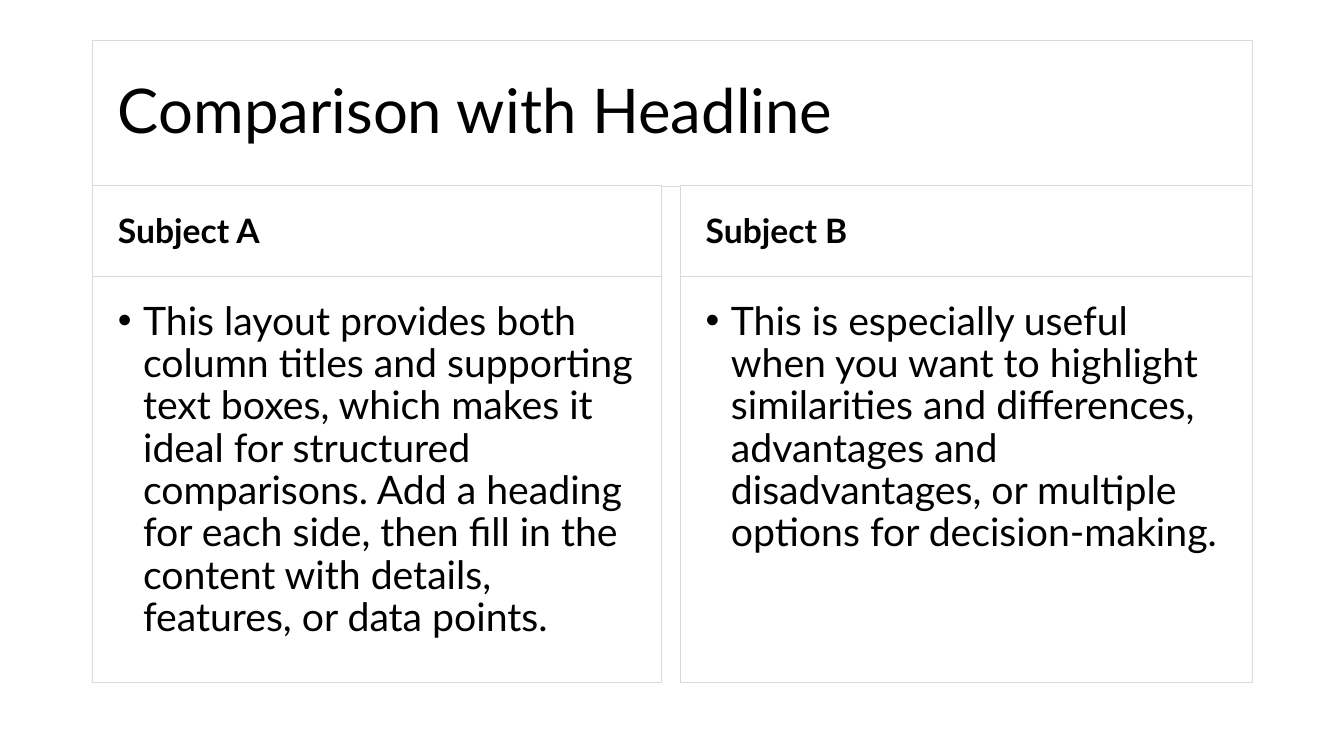
from pptx import Presentation
from pptx.dml.color import RGBColor
from pptx.enum.shapes import MSO_SHAPE
from pptx.enum.text import MSO_ANCHOR, PP_ALIGN
from pptx.oxml.ns import qn
from pptx.util import Inches, Pt

THEME = {
    "font": "Lato",
    "text": RGBColor.from_string("000000"),
    "fill": RGBColor.from_string("FFFFFF"),
    "border": RGBColor.from_string("D9D9D9"),
    "title": Pt(44),
    "heading": Pt(24),
    "body": Pt(28),
}
PAD = Inches(0.25)

# Grid, in inches: (start, length)
COLUMNS = [(0.92, 5.64), (6.75, 5.67)]
FULL_WIDTH = (0.92, 11.5)
TITLE_ROW, HEADING_ROW, BODY_ROW = (0.4, 1.45), (1.84, 0.9), (2.74, 4.03)

SUBJECTS = [
    ("Subject A",
     "This layout provides both column titles and supporting text boxes, "
     "which makes it ideal for structured comparisons. Add a heading for each "
     "side, then fill in the content with details, features, or data points."),
    ("Subject B",
     "This is especially useful when you want to highlight similarities and "
     "differences, advantages and disadvantages, or multiple options for "
     "decision-making."),
]

prs = Presentation()
prs.slide_width, prs.slide_height = Inches(13.33), Inches(7.5)
s = prs.slides.add_slide(prs.slide_layouts[6])


def add_panel(column, row, text, style, anchor, bold=False, bullet=False):
    """Add a bordered text panel in the given grid cell."""
    (x, w), (y, h) = column, row
    sp = s.shapes.add_shape(MSO_SHAPE.RECTANGLE, Inches(x), Inches(y), Inches(w), Inches(h))
    sp.shadow.inherit = False
    sp.fill.solid()
    sp.fill.fore_color.rgb = THEME["fill"]
    sp.line.color.rgb = THEME["border"]
    sp.line.width = Pt(0.75)

    tf = sp.text_frame
    tf.word_wrap = True
    tf.vertical_anchor = anchor
    tf.margin_left = tf.margin_right = tf.margin_top = tf.margin_bottom = PAD
    tf.text = text
    p = tf.paragraphs[0]
    p.alignment = PP_ALIGN.LEFT
    p.line_spacing = 0.9
    if bullet:
        pPr = p._p.get_or_add_pPr()
        pPr.set("marL", str(PAD))
        pPr.set("indent", str(-PAD))
        pPr.makeelement(qn("a:buFont"), {})
        for tag, attribute, value in [("a:buFont", "typeface", "Arial"), ("a:buChar", "char", "•")]:
            pPr.append(pPr.makeelement(qn(tag), {attribute: value}))
    font = p.runs[0].font
    font.name, font.size, font.bold = THEME["font"], THEME[style], bold
    font.color.rgb = THEME["text"]


add_panel(FULL_WIDTH, TITLE_ROW, "Comparison with Headline", "title", MSO_ANCHOR.MIDDLE)
for column, (heading, body) in zip(COLUMNS, SUBJECTS):
    add_panel(column, HEADING_ROW, heading, "heading", MSO_ANCHOR.BOTTOM, bold=True)
    add_panel(column, BODY_ROW, body, "body", MSO_ANCHOR.TOP, bullet=True)

prs.save("out.pptx")
